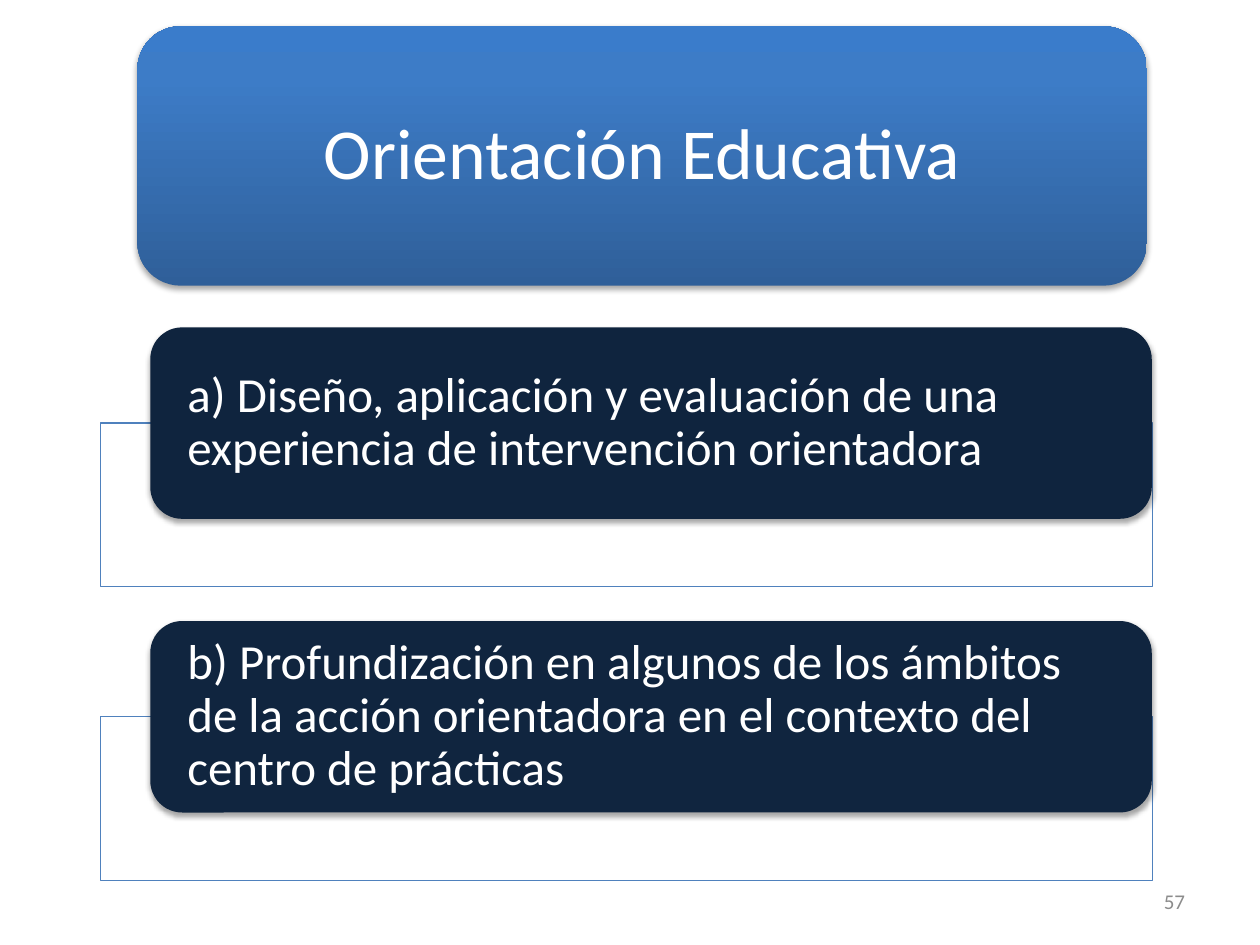
from copy import deepcopy

from lxml import etree
from pptx import Presentation
from pptx import util as u
from pptx.dml.color import RGBColor
from pptx.enum import shapes, text
from pptx.oxml import ns

WHITE = RGBColor(0xFF, 0xFF, 0xFF)
GREY = RGBColor(0x8C, 0x8C, 0x8C)
LINE_BLUE = RGBColor(0x4F, 0x81, 0xBD)
GRADIENT = (
    (0, RGBColor(0x2F, 0x5F, 0x99)),
    (0.8, RGBColor(0x3D, 0x7C, 0xC7)),
    (1, RGBColor(0x3A, 0x7C, 0xCB)),
)
ITEMS = (
    ("a) Diseño, aplicación y evaluación de una experiencia de "
     "intervención orientadora", RGBColor(0x0F, 0x24, 0x3E)),
    ("b) Profundización en algunos de los ámbitos de la acción orientadora "
     "en el contexto del centro de prácticas", RGBColor(0x10, 0x25, 0x3F)),
)
ITEM_TOP, ITEM_PITCH, FRAME_DROP = 6.6, 5.92, 1.93
CORNER_INSET = 0.0488


def add_xml(parent, tag, **attrs):
    return etree.SubElement(parent, ns.qn(tag), attrs)


class SlideBuilder:
    font = "Calibri"

    def __init__(self, slide):
        self.s = slide

    def shape(self, kind, left, top, width, height):
        sp = self.s.shapes.add_shape(
            kind, u.Cm(left), u.Cm(top), u.Cm(width), u.Cm(height))
        sp.shadow.inherit = False
        return sp

    def frame(self, left, top, width, height):
        sp = self.shape(shapes.MSO_SHAPE.RECTANGLE, left, top, width, height)
        sp.fill.solid()
        sp.fill.fore_color.rgb = WHITE
        color = sp.fill._xPr.find(".//" + ns.qn("a:srgbClr"))
        add_xml(color, "a:alpha", val="90000")
        sp.line.color.rgb = LINE_BLUE
        sp.line.width = u.Pt(0.75)

    def panel(self, left, top, width, height, color=None):
        sp = self.shape(shapes.MSO_SHAPE.ROUNDED_RECTANGLE,
                        left, top, width, height)
        if color is None:
            self.paint_gradient(sp.fill)
        else:
            sp.fill.solid()
            sp.fill.fore_color.rgb = color
        sp.line.fill.background()
        self.drop_shadow(sp)

    def paint_gradient(self, fill):
        fill.gradient()
        fill.gradient_angle = 90
        stops = fill._xPr.find(".//" + ns.qn("a:gsLst"))
        stops.append(deepcopy(stops[-1]))
        for stop, (position, color) in zip(fill.gradient_stops, GRADIENT):
            stop.position = position
            stop.color.rgb = color

    def drop_shadow(self, sp):
        effects = sp._element.spPr.find(ns.qn("a:effectLst"))
        shadow = add_xml(effects, "a:outerShdw", blurRad=str(u.Pt(3.1)),
                         dist=str(u.Pt(1.8)), dir="5400000", rotWithShape="0")
        color = add_xml(shadow, "a:srgbClr", val="000000")
        add_xml(color, "a:alpha", val="35000")

    def label(self, words, left, top, width, height, size, color=WHITE,
              align=text.PP_ALIGN.LEFT, spacing=0.9, pad_x=0.25, pad_y=0.13):
        box = self.s.shapes.add_textbox(
            u.Cm(left), u.Cm(top), u.Cm(width), u.Cm(height))
        tf = box.text_frame
        tf.word_wrap = True
        tf.vertical_anchor = text.MSO_ANCHOR.MIDDLE
        tf.margin_left = tf.margin_right = u.Cm(pad_x)
        tf.margin_top = tf.margin_bottom = u.Cm(pad_y)
        p = tf.paragraphs[0]
        p.alignment = align
        p.line_spacing = spacing
        r = p.add_run()
        r.text = words
        r.font.name = self.font
        r.font.size = u.Pt(size)
        r.font.color.rgb = color

    def titled_panel(self, words, left, top, width, height, size,
                     color=None, **style):
        self.panel(left, top, width, height, color)
        inset = height * CORNER_INSET
        self.label(words, left + inset, top + inset, width - 2 * inset,
                   height - 2 * inset, size, **style)


def main():
    prs = Presentation()
    prs.slide_width, prs.slide_height = u.Cm(25.4), u.Cm(19.05)
    b = SlideBuilder(prs.slides.add_slide(prs.slide_layouts[6]))

    b.label("57", 18.21, 17.65, 5.93, 1.02, 12, GREY,
            text.PP_ALIGN.RIGHT, spacing=1)
    b.titled_panel("Orientación Educativa", 2.77, 0.53, 20.35, 5.23, 41,
                   align=text.PP_ALIGN.CENTER, pad_x=0.43, pad_y=0.43)
    for i, (words, color) in enumerate(ITEMS):
        top = ITEM_TOP + i * ITEM_PITCH
        b.frame(2.03, top + FRAME_DROP, 21.21, 3.3)
        b.titled_panel(words, 3.03, top, 20.19, 3.86, 28, color,
                       pad_x=0.56, pad_y=0)

    prs.save("out.pptx")


if __name__ == "__main__":
    main()
